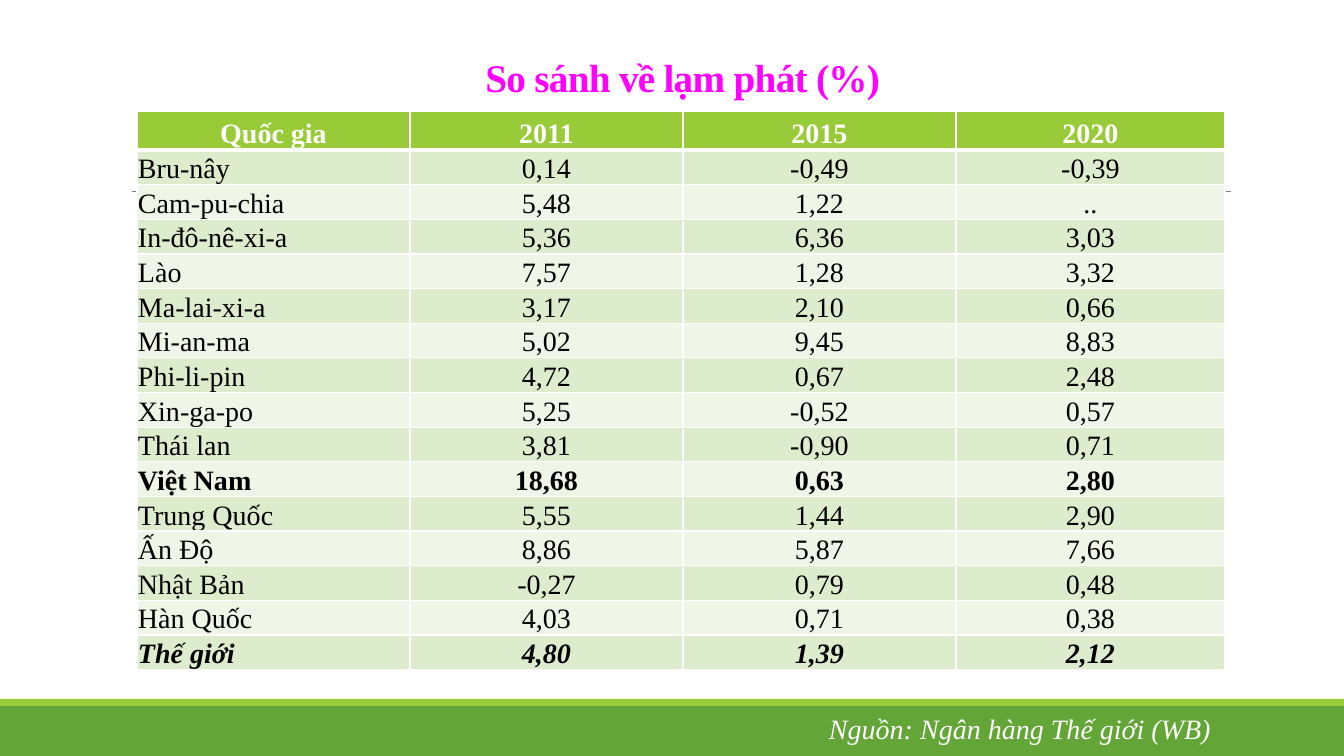
from lxml.etree import SubElement
from pptx import Presentation
from pptx.dml.color import RGBColor
from pptx.enum.shapes import MSO_CONNECTOR as Connector, MSO_SHAPE as Shape
from pptx.enum.text import MSO_ANCHOR as Anchor, MSO_AUTO_SIZE as AutoSize, PP_ALIGN as Align
from pptx.oxml import parse_xml
from pptx.oxml.ns import nsdecls, qn
from pptx.util import Pt

PX = 914400 / 100.8
FONT = "Times New Roman"
COLORS = {
    "white": "FFFFFF", "black": "000000", "title": "FF00FF", "rule": "808080",
    "footer": "63A537", "accent": "99CB38", "dark_band": "DEECCE", "light_band": "EFF6E8",
}
HEADER = ("Quốc gia", "2011", "2015", "2020")
INFLATION = [
    ("Bru-nây", "0,14", "-0,49", "-0,39"),
    ("Cam-pu-chia", "5,48", "1,22", ".."),
    ("In-đô-nê-xi-a", "5,36", "6,36", "3,03"),
    ("Lào", "7,57", "1,28", "3,32"),
    ("Ma-lai-xi-a", "3,17", "2,10", "0,66"),
    ("Mi-an-ma", "5,02", "9,45", "8,83"),
    ("Phi-li-pin", "4,72", "0,67", "2,48"),
    ("Xin-ga-po", "5,25", "-0,52", "0,57"),
    ("Thái lan", "3,81", "-0,90", "0,71"),
    ("Việt Nam", "18,68", "0,63", "2,80"),
    ("Trung Quốc", "5,55", "1,44", "2,90"),
    ("Ấn Độ", "8,86", "5,87", "7,66"),
    ("Nhật Bản", "-0,27", "0,79", "0,48"),
    ("Hàn Quốc", "4,03", "0,71", "0,38"),
    ("Thế giới", "4,80", "1,39", "2,12"),
]
BOLD_ROWS = ("Quốc gia", "Việt Nam", "Thế giới")
ITALIC_ROWS = ("Thế giới",)


def px(length):
    return round(length * PX)


def color(name):
    return RGBColor.from_string(COLORS[name])


def paint(target, name):
    target.fill.solid()
    target.fill.fore_color.rgb = color(name)


def write(frame, text, size, color_name, align, bold=False, italic=False):
    frame.text = text
    para = frame.paragraphs[0]
    para.alignment = align
    font = para.runs[0].font
    font.name, font.size, font.bold, font.italic = FONT, Pt(size), bold, italic
    font.color.rgb = color(color_name)
    return para


def add_title(slide, left, top, width, height):
    title = slide.shapes.title
    title.left, title.top, title.width, title.height = map(px, (left, top, width, height))
    paint(title, "white")
    frame = title.text_frame
    frame.auto_size = AutoSize.NONE
    frame.vertical_anchor = Anchor.BOTTOM
    para = write(frame, "So sánh về lạm phát (%)", 28, "title", Align.CENTER, bold=True)
    para.line_spacing = 1.5
    para.runs[0].font._element.set("spc", "-50")


def add_rule(slide, left, top, width):
    rule = slide.shapes.add_connector(
        Connector.STRAIGHT, px(left), px(top), px(left + width), px(top))
    rule.line.color.rgb = color("rule")
    rule.line.width = Pt(0.5)
    SubElement(rule._element.spPr, qn("a:effectLst"))


def add_borders(cell, top_points, bottom_points):
    sides = (("lnL", 1), ("lnR", 1), ("lnT", top_points), ("lnB", bottom_points))
    for index, (side, points) in enumerate(sides):
        border = parse_xml(
            f'<a:{side} {nsdecls("a")} w="{Pt(points)}"><a:solidFill>'
            f'<a:srgbClr val="{COLORS["white"]}"/></a:solidFill></a:{side}>')
        cell._tc.get_or_add_tcPr().insert(index, border)


def add_inflation_table(slide, left, top, width, height):
    rows = [HEADER] + INFLATION
    table = slide.shapes.add_table(
        len(rows), len(HEADER), px(left), px(top), px(width), px(height)).table
    header_height, column_width = 39, 273
    last_width = width - column_width * (len(HEADER) - 1)
    for index, column in enumerate(table.columns):
        column.width = px(column_width if index < len(HEADER) - 1 else last_width)
    for index, row in enumerate(table.rows):
        row.height = px((height - header_height) / len(INFLATION) if index else header_height)
    for row_index, values in enumerate(rows):
        band = "dark_band" if row_index % 2 else "light_band"
        for column_index, value in enumerate(values):
            cell = table.cell(row_index, column_index)
            cell.margin_left = cell.margin_right = cell.margin_top = px(1)
            cell.margin_bottom = 0
            cell.vertical_anchor = Anchor.BOTTOM
            paint(cell, band if row_index else "accent")
            # A thick edge parts the header from the countries
            add_borders(cell, 3 if row_index == 1 else 1, 1 if row_index else 3)
            write(cell.text_frame, value, 20, "black" if row_index else "white",
                  Align.LEFT if row_index and not column_index else Align.CENTER,
                  bold=values[0] in BOLD_ROWS, italic=values[0] in ITALIC_ROWS)


def add_bar(slide, left, top, width, height, color_name):
    bar = slide.shapes.add_shape(Shape.RECTANGLE, px(left), px(top), px(width), px(height))
    bar.shadow.inherit = False
    paint(bar, color_name)
    bar.line.fill.background()


def add_footer(slide, left, top, width, height):
    stripe = 7
    add_bar(slide, left, top + stripe, width, height - stripe, "footer")
    add_bar(slide, left, top, width, stripe, "accent")
    source = slide.shapes.add_textbox(px(left + 819), px(top + 8), px(405), px(44))
    source.text_frame.word_wrap = False
    write(source.text_frame, "Nguồn: Ngân hàng Thế giới (WB)", 20, "white",
          Align.LEFT, italic=True)


def main():
    deck = Presentation()
    deck.slide_width, deck.slide_height = px(1344), px(756)
    slide = deck.slides.add_slide(deck.slide_layouts.get_by_name("Title Only"))
    add_footer(slide, 0, 699, 1344, 57)
    add_rule(slide, 132, 191, 1099)
    add_title(slide, 98, 28, 1169, 77)
    add_inflation_table(slide, 137, 111, 1088, 539)
    deck.save("out.pptx")


if __name__ == "__main__":
    main()
